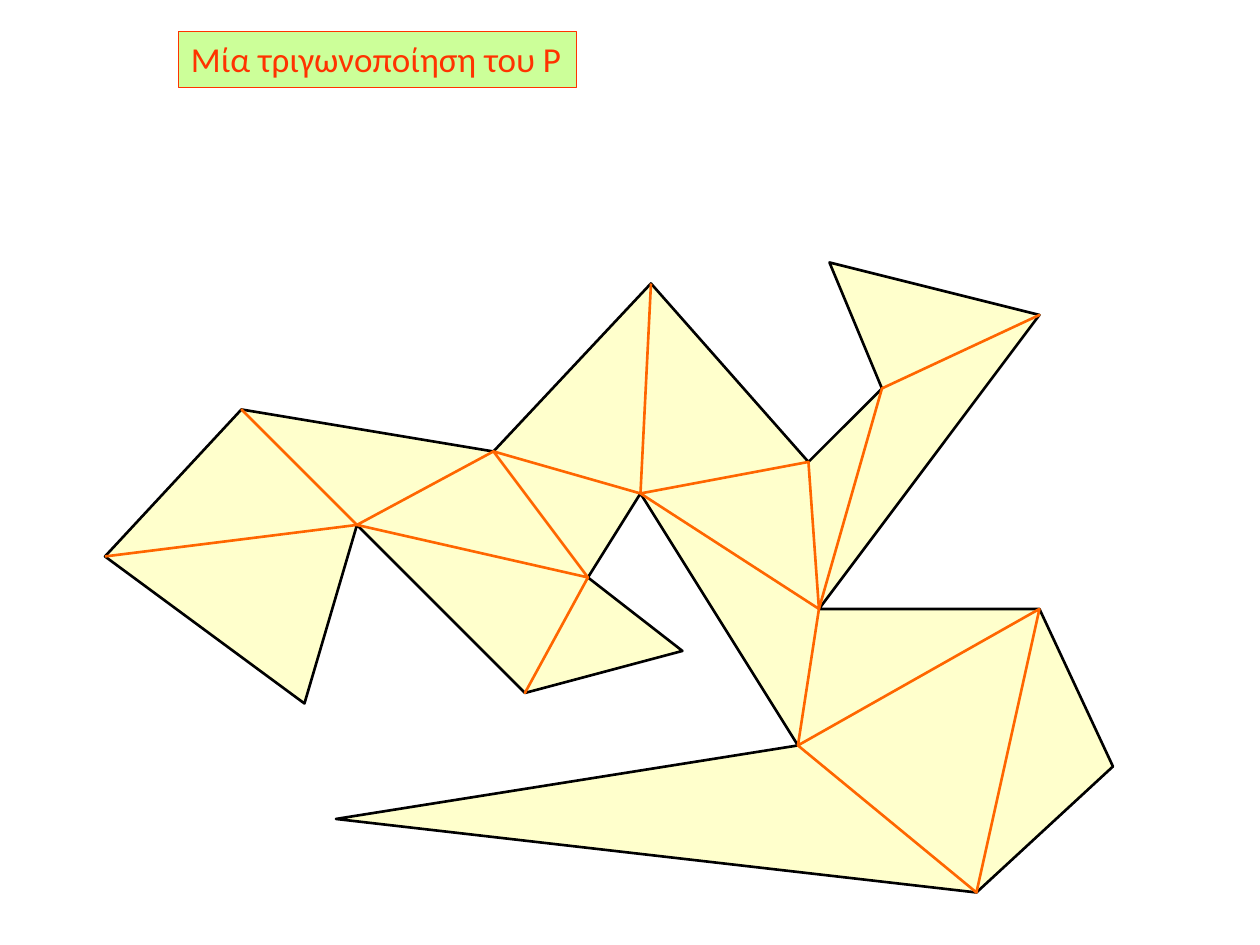
from pptx import Presentation as Deck
from pptx.dml.color import RGBColor as Rgb
from pptx.enum.shapes import MSO_CONNECTOR as Link
from pptx.enum.text import MSO_AUTO_SIZE as Fit
from pptx.oxml.ns import qn
from pptx.util import Inches, Pt
from lxml.etree import SubElement as Sub

TITLE = "Μία τριγωνοποίηση του P"
NODES = dict(
    a=(10, 53), b=(23, 39), c=(47, 43), d=(62, 27), e=(77, 44),
    f=(84, 37), g=(79, 25), h=(99, 30), i=(78, 58), j=(99, 58),
    k=(106, 73), l=(93, 85), m=(32, 78), n=(76, 71), o=(61, 47),
    p=(56, 55), q=(65, 62), r=(50, 66), s=(34, 50), t=(29, 67),
)
RIM = "abcdefghijklmnopqrst"
CUTS = "aspcoeinljnifhfieocsbsprpcoin"
LAST = "od"
BOX = (17, 3, 37.9, 5.3)

THEME = dict(
    rim=dict(fill="FFFFCC", line="000000", width=1.5),
    cut=dict(fill=None, line="FF6600", width=1.5),
    box=dict(fill="CCFF99", line="FF3300", width=0.25),
    font=dict(name="Calibri", size=Pt(20)),
    ink="FF3300",
)
COLS = 120
WIDE, HIGH = Inches(10), Inches(7.5)
UNIT = WIDE // COLS


def grid(*vals):
    return [round(v * UNIT) for v in vals]


def edge(line, look):
    line.color.rgb = Rgb.from_string(look["line"])
    line.width = Pt(look["width"])


def paint(shape, look):
    if look["fill"]:
        shape.fill.solid()
        shape.fill.fore_color.rgb = Rgb.from_string(look["fill"])
    else:
        shape.fill.background()
    edge(shape.line, look)
    shape.shadow.inherit = False


def trace(shapes, route, look, close):
    first, *rest = [NODES[key] for key in route]
    path = shapes.build_freeform(*first, scale=UNIT)
    path.add_line_segments(rest, close=close)
    paint(path.convert_to_shape(), look)


def label(shapes):
    box = shapes.add_textbox(*grid(*BOX))
    paint(box, THEME["box"])
    frame = box.text_frame
    for key, val in dict(word_wrap=False, auto_size=Fit.SHAPE_TO_FIT_TEXT).items():
        setattr(frame, key, val)
    run = frame.paragraphs[0].add_run()
    run.text = TITLE
    for key, val in THEME["font"].items():
        setattr(run.font, key, val)
    run.font.color.rgb = Rgb.from_string(THEME["ink"])


def join(shapes, pair, look):
    ends = [v for key in pair for v in NODES[key]]
    line = shapes.add_connector(Link.STRAIGHT, *grid(*ends))
    edge(line.line, look)
    Sub(line._element.spPr, qn("a:effectLst"))


def main():
    deck = Deck()
    deck.slide_width, deck.slide_height = WIDE, HIGH
    shapes = deck.slides.add_slide(deck.slide_layouts[6]).shapes
    trace(shapes, RIM, THEME["rim"], True)
    trace(shapes, CUTS, THEME["cut"], False)
    label(shapes)
    join(shapes, LAST, THEME["cut"])
    deck.save("out.pptx")


if __name__ == "__main__":
    main()
